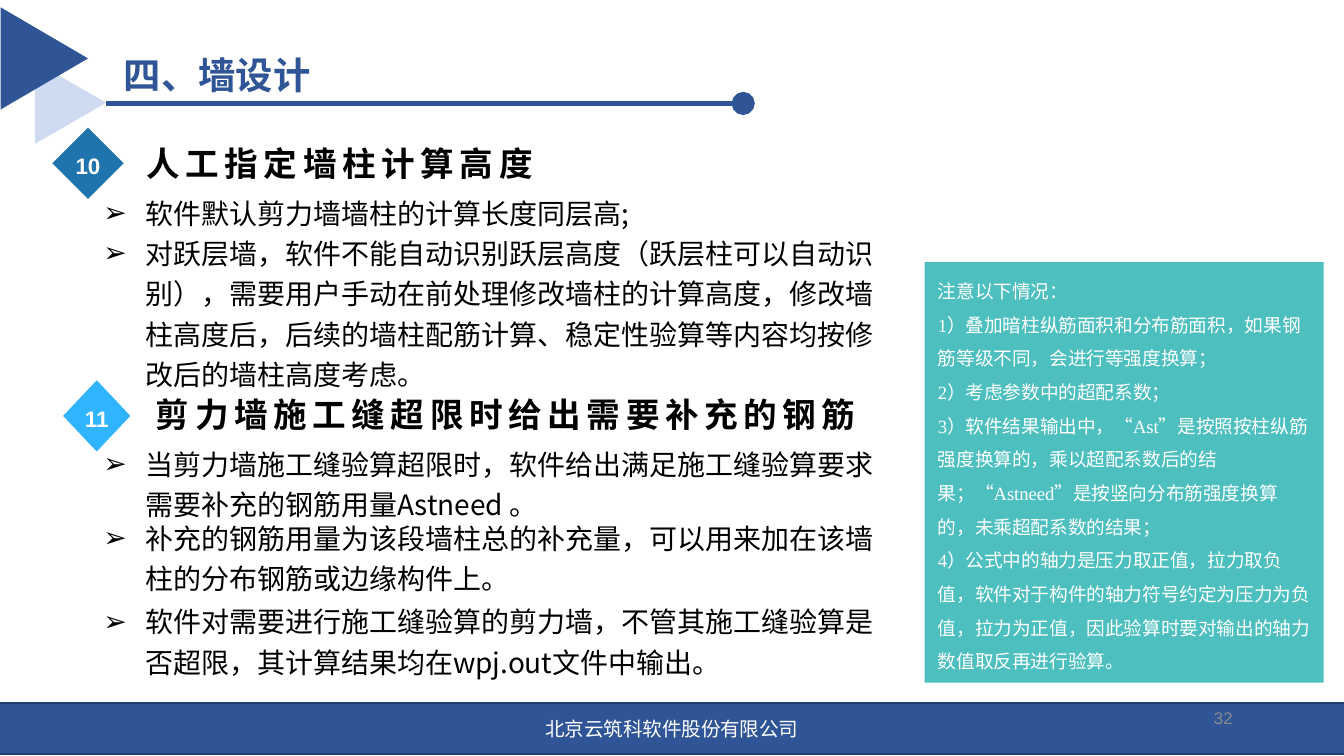
from pptx import Presentation
from pptx.dml.color import RGBColor
from pptx.enum import shapes, text
from pptx.oxml.ns import qn
from pptx.util import Inches, Pt
from lxml import etree

# Content
TITLE = "四、墙设计"
FOOTER = "北京云筑科软件股份有限公司"
PAGE_NUMBER = "32"

# number, colour name, diamond box, heading, heading box
SECTIONS = [
    ("10", "deep", (0.39, 0.95, 0.53, 0.53),
     "人工指定墙柱计算高度", (1.02, 1.02, 4.14, 0.34)),
    ("11", "bright", (0.47, 2.83, 0.5, 0.53),
     "剪力墙施工缝超限时给出需要补充的钢筋", (1.09, 2.89, 5.94, 0.34)),
]

# top, width, height, bullet items
LISTS = [
    (1.41, 5.95, 1.19, [
        "软件默认剪力墙墙柱的计算长度同层高;",
        "对跃层墙，软件不能自动识别跃层高度（跃层柱可以自动识别），需要用户手动在前处理修改墙柱的计算高度，"
        "修改墙柱高度后，后续的墙柱配筋计算、稳定性验算等内容均按修改后的墙柱高度考虑。"]),
    (3.28, 6.02, 0.55, [
        "当剪力墙施工缝验算超限时，软件给出满足施工缝验算要求需要补充的钢筋用量Astneed 。"]),
    (3.83, 6.02, 0.39, [
        "补充的钢筋用量为该段墙柱总的补充量，可以用来加在该墙柱的分布钢筋或边缘构件上。"]),
    (4.45, 6.02, 0.63, [
        "软件对需要进行施工缝验算的剪力墙，不管其施工缝验算是否超限，其计算结果均在wpj.out文件中输出。"]),
]

NOTES = [
    "注意以下情况：",
    "1）叠加暗柱纵筋面积和分布筋面积，如果钢筋等级不同，会进行等强度换算；",
    "2）考虑参数中的超配系数；",
    "3）软件结果输出中，“Ast”是按照按柱纵筋强度换算的，乘以超配系数后的结果；"
    "“Astneed”是按竖向分布筋强度换算的，未乘超配系数的结果；",
    "4）公式中的轴力是压力取正值，拉力取负值，软件对于构件的轴力符号约定为压力为负值，"
    "拉力为正值，因此验算时要对输出的轴力数值取反再进行验算。",
]

THEME = {
    "color": {"navy": "2F5597", "edge": "233F70", "pale": "CFDBF0",
              "deep": "1F74AD", "bright": "31B4FF", "teal": "4DBFBF",
              "white": "FFFFFF", "black": "000000", "grey": "8C8C8C"},
    "size": {"title": 20, "heading": 18, "body": 15, "badge": 12,
             "footer": 10.5, "note": 10, "number": 9},
    "latin": "Arial", "cjk": "Noto Sans CJK SC", "serif": "Times New Roman",
}
LEFT, CENTER, RIGHT = (text.PP_ALIGN.LEFT, text.PP_ALIGN.CENTER, text.PP_ALIGN.RIGHT)
TOP, MIDDLE, BOTTOM = (text.MSO_ANCHOR.TOP, text.MSO_ANCHOR.MIDDLE, text.MSO_ANCHOR.BOTTOM)
HEADING_INSETS = (0.07, 0.04, 0.07, 0)
LIST_INSETS = (0.07, 0, 0.07, 0.04)
NO_INSETS = (0, 0, 0, 0)


def color(name):
    return RGBColor.from_string(THEME["color"][name])


def write(box, lines, size, ink, font=THEME["latin"], bold=False, align=LEFT,
          anchor=TOP, insets=(0.1, 0.05, 0.1, 0.05), leading=1.0,
          tracking=0, bullet=None):
    """Fill a shape with one paragraph per line, all in the same format."""
    frame = box.text_frame
    frame.text = "\n".join(lines)
    frame.word_wrap = True
    frame.auto_size = text.MSO_AUTO_SIZE.NONE
    frame.vertical_anchor = anchor
    (frame.margin_left, frame.margin_top,
     frame.margin_right, frame.margin_bottom) = map(Inches, insets)
    for para in frame.paragraphs:
        para.alignment = align
        para.line_spacing = leading
        para.space_before = para.space_after = Pt(0)
        layout = para._p.get_or_add_pPr()
        layout.set("hangingPunct", "0")
        if bullet:
            layout.set("marL", str(Inches(0.31)))
            layout.set("indent", str(Inches(-0.31)))
            etree.SubElement(layout, qn("a:buFont"), typeface=THEME["latin"])
            etree.SubElement(layout, qn("a:buChar"), char=bullet)
        for span in para.runs:
            span.font.size = Pt(THEME["size"][size])
            span.font.bold = bold
            span.font.color.rgb = color(ink)
            span.font.name = font
            props = span._r.get_or_add_rPr()
            etree.SubElement(props, qn("a:ea"), typeface=THEME["cjk"])
            if tracking:
                props.set("spc", str(tracking * 100))


def place(box, area):
    box.left, box.top, box.width, box.height = map(Inches, area)
    return box


def add_block(page, kind, area, fill, edge=None, rotation=0):
    block = page.shapes.add_shape(kind, *map(Inches, area))
    block.shadow.inherit = False
    block.rotation = rotation
    block.fill.solid()
    block.fill.fore_color.rgb = color(fill)
    if edge:
        block.line.color.rgb = color(edge)
        block.line.width = Pt(1)
    else:
        block.line.fill.background()
    return block


def add_label(page, area, line, size, ink, **style):
    write(page.shapes.add_textbox(*map(Inches, area)), [line], size, ink, **style)


def main():
    deck = Presentation()
    deck.slide_width = Inches(10)
    deck.slide_height = deck.slide_width * 9 // 16
    page = deck.slides.add_slide(deck.slide_layouts[4])
    kinds = shapes.MSO_SHAPE

    # Footer band and page number
    footer = add_block(page, kinds.RECTANGLE, (-0.01, 5.23, 10.02, 0.38), "navy", "edge")
    write(footer, [FOOTER], "footer", "white", align=CENTER, anchor=MIDDLE)
    add_label(page, (7.06, 5.21, 2.21, 0.26), PAGE_NUMBER, "number", "grey",
              align=RIGHT, anchor=MIDDLE)

    # Title with corner triangles and rule
    for area, fill in [((0.22, 0.5, 0.61, 0.53), "pale"),
                       ((-0.05, 0.11, 0.76, 0.65), "navy")]:
        add_block(page, kinds.ISOSCELES_TRIANGLE, area, fill, rotation=90)
    rule = page.shapes.add_connector(shapes.MSO_CONNECTOR.STRAIGHT,
                                     *map(Inches, (0.79, 0.77, 5.53, 0.77)))
    rule.line.color.rgb = color("navy")
    rule.line.width = Pt(2.5)
    etree.SubElement(rule.line._get_or_add_ln(), qn("a:tailEnd"),
                     type="oval", w="lg", len="lg")
    etree.SubElement(rule._element.spPr, qn("a:effectLst"))
    title = place(page.shapes.title, (0.82, 0.16, 5.04, 0.61))
    write(title, [TITLE], "title", "navy", bold=True, anchor=BOTTOM)

    # Numbered section headings
    for number, fill, diamond, heading, area in SECTIONS:
        badge = add_block(page, kinds.DIAMOND, diamond, fill)
        write(badge, [number], "badge", "white", bold=True, align=CENTER,
              anchor=MIDDLE, insets=NO_INSETS, leading=1.2)
        add_label(page, area, heading, "heading", "black", bold=True, anchor=BOTTOM,
                  insets=HEADING_INSETS, leading=1.2, tracking=3)

    # Bullet lists in the body placeholders
    bodies = [box for box in page.placeholders if box.placeholder_format.idx > 0]
    for body, (top, width, height, items) in zip(bodies, LISTS):
        place(body, (0.7, top, width, height))
        write(body, items, "body", "black", font=THEME["cjk"],
              insets=LIST_INSETS, leading=1.2, bullet="➢")

    # Side note
    note = add_block(page, kinds.RECTANGLE, (6.88, 1.95, 2.97, 3.13), "teal")
    write(note, NOTES, "note", "white", font=THEME["serif"], leading=1.5)

    deck.save("out.pptx")


if __name__ == "__main__":
    main()
